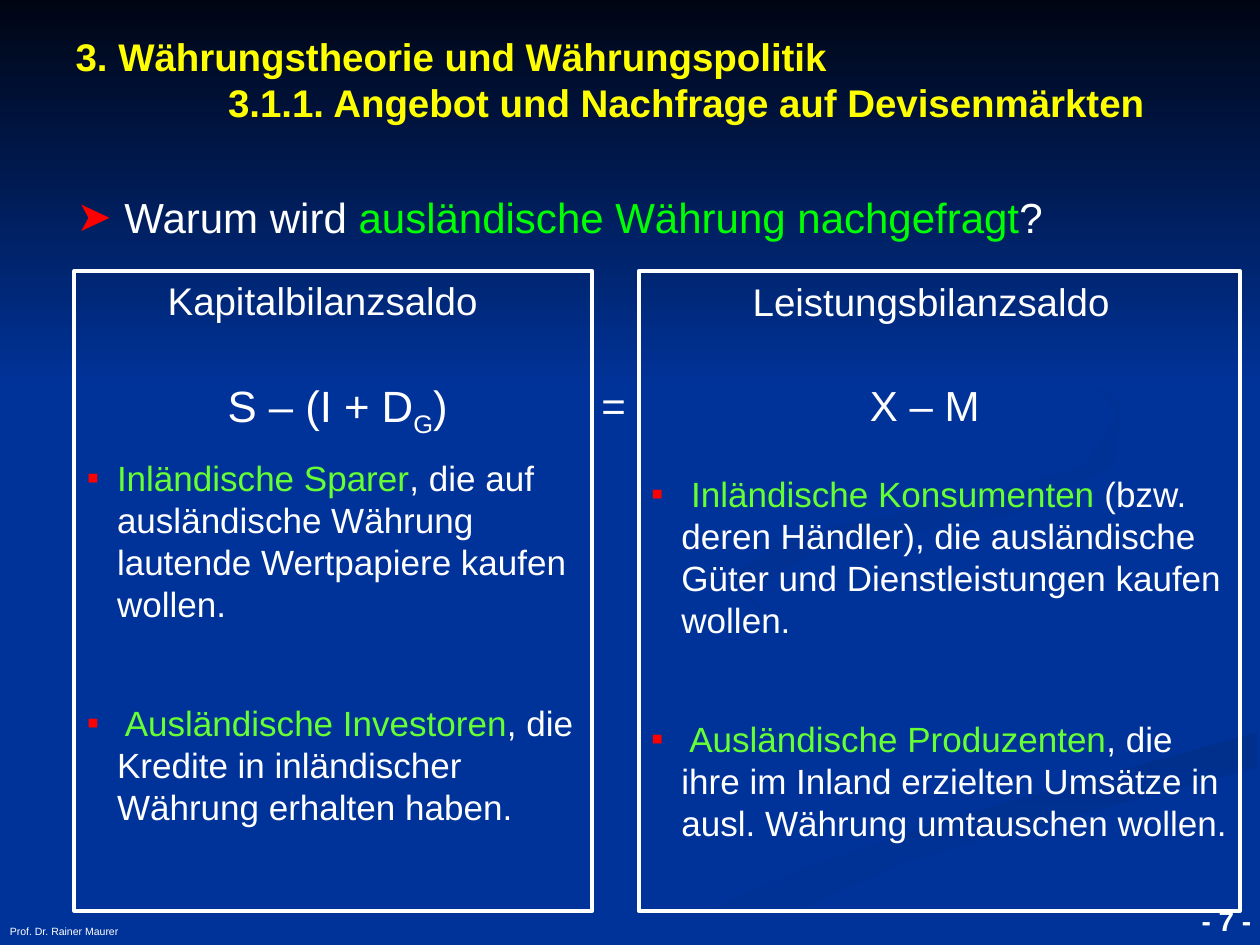
import pptx
import pptx.util
import pptx.dml.color
import pptx.enum.shapes
import pptx.enum.text
import pptx.oxml
import pptx.oxml.ns
from pptx.util import Inches

WHITE, YELLOW, RED, LIME, GREEN, BLUE = "FFFFFF", "FFFF00", "FF0000", "00FF00", "66FF33", "003399"
ALIGN = pptx.enum.text.PP_ALIGN
ANCHOR = pptx.enum.text.MSO_ANCHOR
RECT = pptx.enum.shapes.MSO_SHAPE.RECTANGLE


def rgb(value):
    return pptx.dml.color.RGBColor.from_string(value)


def write(tf, runs, size=20, bold=False, align=ALIGN.LEFT, bullet=None, indent=0,
          hanging=0, before=0, spacing=None, new=False):
    """Write one paragraph from (text, colour[, baseline]) runs."""
    p = tf.add_paragraph() if new else tf.paragraphs[0]
    p.alignment = align
    p.space_before = pptx.util.Pt(before)
    if spacing:
        p.line_spacing = pptx.util.Pt(spacing)
    pPr = p._p.get_or_add_pPr()
    pPr.set("marL", str(Inches(indent)))
    pPr.set("indent", str(Inches(-hanging)))
    if bullet:
        ns = pptx.oxml.ns.nsdecls("a")
        for xml in (f'<a:buClr {ns}><a:srgbClr val="{RED}"/></a:buClr>',
                    f'<a:buFont {ns} typeface="Arial"/>',
                    f'<a:buChar {ns} char="{bullet}"/>'):
            pPr.append(pptx.oxml.parse_xml(xml))
    for text, color, *baseline in runs:
        r = p.add_run()
        r.text = text
        r.font.name, r.font.size, r.font.bold = "Arial", pptx.util.Pt(size), bold
        r.font.color.rgb = rgb(color)
        if baseline:
            r.font._element.set("baseline", str(baseline[0]))


prs = pptx.Presentation()
prs.slide_width, prs.slide_height = Inches(10), Inches(7.5)
s = prs.slides.add_slide(prs.slide_layouts[5])
s.background.fill.solid()
s.background.fill.fore_color.rgb = rgb(BLUE)

# Faint swirl, faint band and the dark strip across the top: points, start, end, angle
decorations = [
    ([(7.62, 2.33), (8.46, 2.79), (8.88, 3.28), (8.61, 3.7), (7.63, 3.98), (6.25, 4.26),
      (5.78, 4.6), (6.22, 5), (5.93, 4.7), (6.49, 4.36), (8.07, 4.07), (8.83, 3.7),
      (8.9, 3.24), (8.43, 2.75)], "002F8E", BLUE, 315),
    ([(5.03, 7.49), (5.71, 7.49), (7.22, 6.82), (9.98, 6.09), (9.98, 5.81), (7.64, 6.47),
      (6.3, 6.93)], "002F8C", BLUE, 270),
    ([(0, 0), (0, 3.08), (10, 3.08), (10, 0)], "000514", BLUE, 270),
]
for points, start, end, angle in decorations:
    (x, y), *rest = [(Inches(a), Inches(b)) for a, b in points]
    builder = s.shapes.build_freeform(x, y)
    builder.add_line_segments(rest, close=True)
    sp = builder.convert_to_shape()
    sp.shadow.inherit = False
    sp.line.fill.background()
    sp.fill.gradient()
    sp.fill.gradient_angle = angle
    for stop, color in zip(sp.fill.gradient_stops, (start, end)):
        stop.color.rgb = rgb(color)

title = s.shapes.title
title.element.getparent().append(title.element)  # in front of the decorations
title.left, title.top, title.width, title.height = map(Inches, (0.5, 0.03, 9, 1.2))
tf = title.text_frame
tf.vertical_anchor = ANCHOR.MIDDLE
tf.auto_size = pptx.enum.text.MSO_AUTO_SIZE.NONE
write(tf, [("3. Währungstheorie und Währungspolitik", YELLOW)], size=22, bold=True, spacing=26)
write(tf, [("3.1.1. Angebot und Nachfrage auf Devisenmärkten", YELLOW)], size=22, bold=True,
      indent=1.21, spacing=26, new=True)

# Framed boxes: left, width, top inset, bullet paragraphs
boxes = [
    (0.59, 4.11, 1.47, [
        [("Inländische Sparer", GREEN),
         (", die auf ausländische Währung lautende Wertpapiere kaufen wollen.", WHITE)],
        [(" Ausländische Investoren", GREEN),
         (", die Kredite in inländischer Währung erhalten haben.", WHITE)]]),
    (5.07, 4.77, 1.6, [
        [(" Inländische Konsumenten ", GREEN),
         ("(bzw. deren Händler), die ausländische Güter und Dienstleistungen kaufen wollen.", WHITE)],
        [(" Ausländische Produzenten", GREEN),
         (", die ihre im Inland erzielten Umsätze in ausl. Währung umtauschen wollen.", WHITE)]]),
]
for left, width, inset, bullets in boxes:
    sp = s.shapes.add_shape(RECT, Inches(left), Inches(2.15), Inches(width), Inches(5.08))
    sp.shadow.inherit = False
    sp.fill.background()
    sp.line.color.rgb = rgb(WHITE)
    sp.line.width = pptx.util.Pt(2.25)
    tf = sp.text_frame
    tf.word_wrap = True
    tf.vertical_anchor = ANCHOR.TOP
    tf.margin_top = Inches(inset)
    for i, runs in enumerate(bullets):
        write(tf, runs, bullet="▪", indent=0.24, hanging=0.24, before=44 * i,
              spacing=24, new=i > 0)

# Free text: position, anchor, runs, format
center = dict(align=ALIGN.CENTER)
texts = [
    ((0.51, 1.47, 9, 0.58), ANCHOR.TOP,
     [("Warum wird ", WHITE), ("ausländische Währung nachgefragt", LIME), ("?", WHITE)],
     dict(size=24, bullet="➤", indent=0.38, hanging=0.38)),
    ((1.14, 2.15, 2.84, 0.47), ANCHOR.TOP, [("Kapitalbilanzsaldo", WHITE)], dict(size=22, **center)),
    ((5.81, 2.16, 3.16, 0.47), ANCHOR.TOP, [("Leistungsbilanzsaldo", WHITE)], dict(size=22, **center)),
    ((1.6, 2.96, 2.16, 0.52), ANCHOR.TOP,
     [("S – (I + D", WHITE), ("G", WHITE, -25000), (")", WHITE)], dict(size=25, **center)),
    ((4.4, 2.96, 0.94, 0.5), ANCHOR.TOP, [("=", WHITE)], dict(size=24, **center)),
    ((6.69, 2.96, 1.3, 0.52), ANCHOR.TOP, [("X – M", WHITE)], dict(size=24, **center)),
    ((-0.02, 6.97, 7.17, 0.52), ANCHOR.BOTTOM, [("Prof. Dr. Rainer Maurer", WHITE)], dict(size=6)),
    ((7.7, 6.97, 2.33, 0.52), ANCHOR.BOTTOM, [("- 7 -", WHITE)],
     dict(size=16, bold=True, align=ALIGN.RIGHT)),
]
for place, anchor, runs, style in texts:
    tf = s.shapes.add_textbox(*map(Inches, place)).text_frame
    tf.word_wrap = True
    tf.vertical_anchor = anchor
    write(tf, runs, **style)

prs.save("out.pptx")
